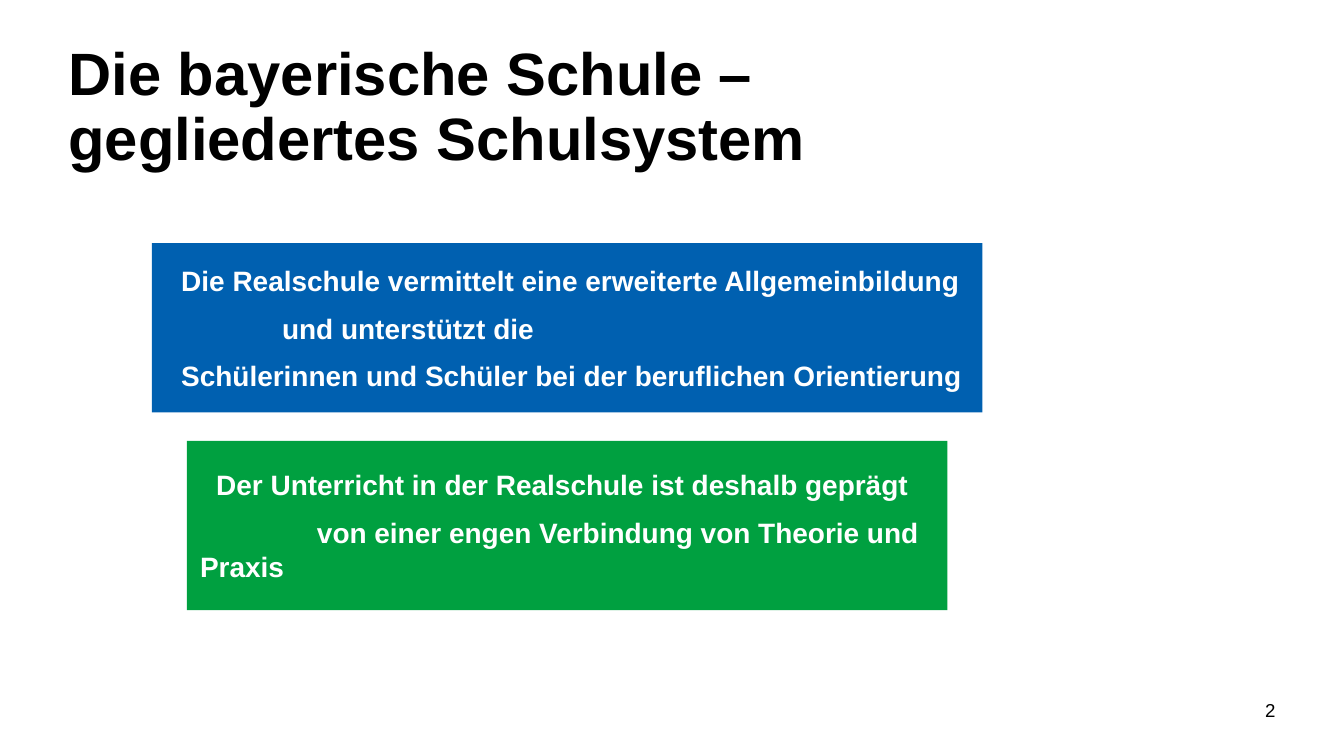
from dataclasses import dataclass

from pptx import Presentation
from pptx.dml.color import RGBColor
from pptx.enum.shapes import MSO_SHAPE as Shape
from pptx.enum.text import MSO_ANCHOR as Anchor, PP_ALIGN as Align
from pptx.util import Inches, Pt

WIDTH = Inches(10)
HEIGHT = WIDTH * 9 // 16
FONT = "Arial"
BLACK, WHITE, BLUE, GREEN = "000000", "FFFFFF", "0060B0", "00A040"
NEAR, FAR = Inches(0.12), Inches(0.87)
BANNER_CENTER, BANNER_HEIGHT = 42.2, 22.4


@dataclass
class Area:
    left: float
    top: float
    width: float
    height: float

    def lengths(self) -> tuple[int, int, int, int]:
        return (
            round(self.left * WIDTH / 100), round(self.top * HEIGHT / 100),
            round(self.width * WIDTH / 100), round(self.height * HEIGHT / 100),
        )


@dataclass
class Line:
    text: str
    indent: int


@dataclass
class Banner:
    top: float
    width: float
    fill: str
    lines: list[Line]


@dataclass
class Label:
    text: str
    area: Area
    size: int
    bold: bool = False
    align: Align = Align.LEFT
    spacing: float = 1.0


def color(value: str) -> RGBColor:
    return RGBColor.from_string(value)


def style(para, size: int, ink: str, bold: bool) -> None:
    font = para.font
    font.name, font.size, font.bold = FONT, Pt(size), bold
    font.color.rgb = color(ink)


def draw_label(page, label: Label) -> None:
    box = page.shapes.add_textbox(*label.area.lengths())
    frame = box.text_frame
    frame.word_wrap = True
    frame.margin_left = frame.margin_right = 0
    frame.margin_top = frame.margin_bottom = 0
    para = frame.paragraphs[0]
    para.text = label.text
    para.alignment = label.align
    para.line_spacing = label.spacing
    style(para, label.size, BLACK, label.bold)


def draw_banner(page, banner: Banner) -> None:
    left = BANNER_CENTER - banner.width / 2
    area = Area(left, banner.top, banner.width, BANNER_HEIGHT)
    box = page.shapes.add_shape(Shape.RECTANGLE, *area.lengths())
    box.shadow.inherit = False
    box.fill.solid()
    box.fill.fore_color.rgb = color(banner.fill)
    box.line.fill.background()
    frame = box.text_frame
    frame.word_wrap = True
    frame.vertical_anchor = Anchor.MIDDLE
    for index, line in enumerate(banner.lines):
        para = frame.add_paragraph() if index else frame.paragraphs[0]
        para.text = line.text
        para.alignment = Align.LEFT
        para.space_before = Pt(7.5 if index else 0)
        para._p.get_or_add_pPr().set("indent", str(line.indent))
        style(para, 15, WHITE, True)


LABELS = [
    Label("Die bayerische Schule –\vgegliedertes Schulsystem",
          Area(5.1, 5.87, 67.3, 17.78), 32, bold=True, spacing=0.9),
    Label("2", Area(89.7, 92.5, 5.2, 3.56), 10, align=Align.RIGHT),
]

BANNERS = [
    Banner(32.18, 61.8, BLUE, [
        Line("Die Realschule vermittelt eine erweiterte Allgemeinbildung", NEAR),
        Line("und unterstützt die", FAR),
        Line("Schülerinnen und Schüler bei der beruflichen Orientierung", NEAR),
    ]),
    Banner(58.31, 56.6, GREEN, [
        Line("Der Unterricht in der Realschule ist deshalb geprägt", NEAR),
        Line("von einer engen Verbindung von Theorie und Praxis", FAR),
    ]),
]


def main() -> None:
    deck = Presentation()
    deck.slide_width, deck.slide_height = WIDTH, HEIGHT
    page = deck.slides.add_slide(deck.slide_layouts[6])
    for label in LABELS:
        draw_label(page, label)
    for banner in BANNERS:
        draw_banner(page, banner)
    deck.save("out.pptx")


if __name__ == "__main__":
    main()
